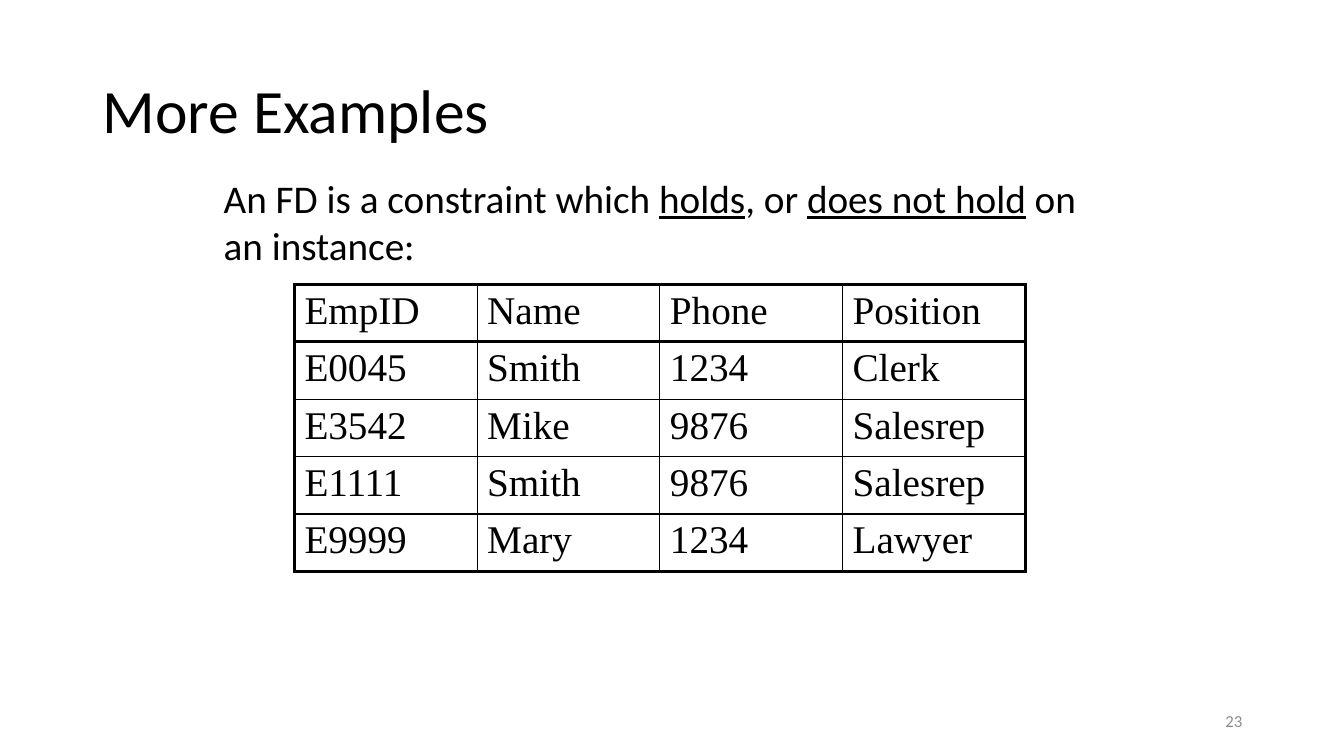
import pptx
import pptx.util
import pptx.dml.color
import pptx.enum.text
import pptx.oxml
import pptx.oxml.ns

Inches = pptx.util.Inches
Pt = pptx.util.Pt
Align = pptx.enum.text.PP_ALIGN
Anchor = pptx.enum.text.MSO_ANCHOR
Fit = pptx.enum.text.MSO_AUTO_SIZE

COLORS = {"ink": "000000", "gray": "8C8C8C"}
FONTS = {
    "title": {"name": "Calibri", "size": Pt(44)},
    "body": {"name": "Calibri", "size": Pt(28)},
    "cell": {"name": "Times New Roman", "size": Pt(28)},
    "page": {"name": "Calibri", "size": Pt(12)},
}
THICK, THIN = 2.25, 1

STAFF = [
    ["EmpID", "Name", "Phone", "Position"],
    ["E0045", "Smith", "1234", "Clerk"],
    ["E3542", "Mike", "9876", "Salesrep"],
    ["E1111", "Smith", "9876", "Salesrep"],
    ["E9999", "Mary", "1234", "Lawyer"],
]


def apply(target, values):
    for name, value in values.items():
        setattr(target, name, value)


class Deck:
    def __init__(self, width, height):
        self.prs = pptx.Presentation()
        apply(self.prs, {"slide_width": Inches(width), "slide_height": Inches(height)})
        self.slide = self.prs.slides.add_slide(self.prs.slide_layouts[5])

    def add_runs(self, para, parts, style, color="ink"):
        """Add runs to a paragraph from (text, underlined) pairs."""
        for text, under in parts:
            run = para.add_run()
            run.text = text
            apply(run.font, FONTS[style])
            run.font.underline = under
            run.font.color.rgb = pptx.dml.color.RGBColor.from_string(COLORS[color])

    def title(self, text, left, top, width, height):
        shape = self.slide.shapes.title
        apply(shape, {"left": Inches(left), "top": Inches(top),
                      "width": Inches(width), "height": Inches(height)})
        apply(shape.text_frame, {"word_wrap": True, "auto_size": Fit.NONE,
                                 "vertical_anchor": Anchor.MIDDLE})
        para = shape.text_frame.paragraphs[0]
        apply(para, {"alignment": Align.LEFT, "line_spacing": 0.9})
        self.add_runs(para, [(text, False)], "title")

    def text(self, parts, left, top, width, height, style,
             color="ink", align=Align.LEFT, anchor=Anchor.TOP):
        box = self.slide.shapes.add_textbox(
            Inches(left), Inches(top), Inches(width), Inches(height))
        apply(box.text_frame, {"word_wrap": True, "vertical_anchor": anchor})
        para = box.text_frame.paragraphs[0]
        para.alignment = align
        self.add_runs(para, parts, style, color)

    def border(self, cell, side, width):
        line = pptx.oxml.parse_xml(
            f'<a:ln{side} {pptx.oxml.ns.nsdecls("a")} w="{Pt(width)}">'
            f'<a:solidFill><a:srgbClr val="{COLORS["ink"]}"/></a:solidFill>'
            f'</a:ln{side}>')
        cell._tc.get_or_add_tcPr().append(line)

    def table(self, rows, left, top, width, height):
        """Draw a grid with a thick frame and a thick rule under the header."""
        last_row, last_col = len(rows) - 1, len(rows[0]) - 1
        grid = self.slide.shapes.add_table(
            len(rows), len(rows[0]), Inches(left), Inches(top),
            Inches(width), Inches(height)).table
        apply(grid, {"first_row": False, "horz_banding": False})
        for r, row in enumerate(rows):
            for c, value in enumerate(row):
                cell = grid.cell(r, c)
                self.add_runs(cell.text_frame.paragraphs[0], [(value, False)], "cell")
                thick = {"L": c == 0, "R": c == last_col,
                         "T": r <= 1, "B": r in (0, last_row)}
                for side, bold in thick.items():
                    self.border(cell, side, THICK if bold else THIN)
                cell.fill.background()


def main():
    deck = Deck(13.33, 7.5)
    deck.text([("23", False)], 9.42, 6.95, 3, 0.4, "page", "gray",
              Align.RIGHT, Anchor.MIDDLE)
    deck.title("More Examples", 0.92, 0.4, 11.5, 1.45)
    deck.text([("An FD is a constraint which ", False), ("holds", True),
               (", or ", False), ("does not hold", True),
               (" on an instance:", False)], 2.12, 1.68, 8.85, 1.05, "body")
    deck.table(STAFF, 2.92, 2.82, 7.25, 2.85)
    deck.prs.save("out.pptx")


if __name__ == "__main__":
    main()
